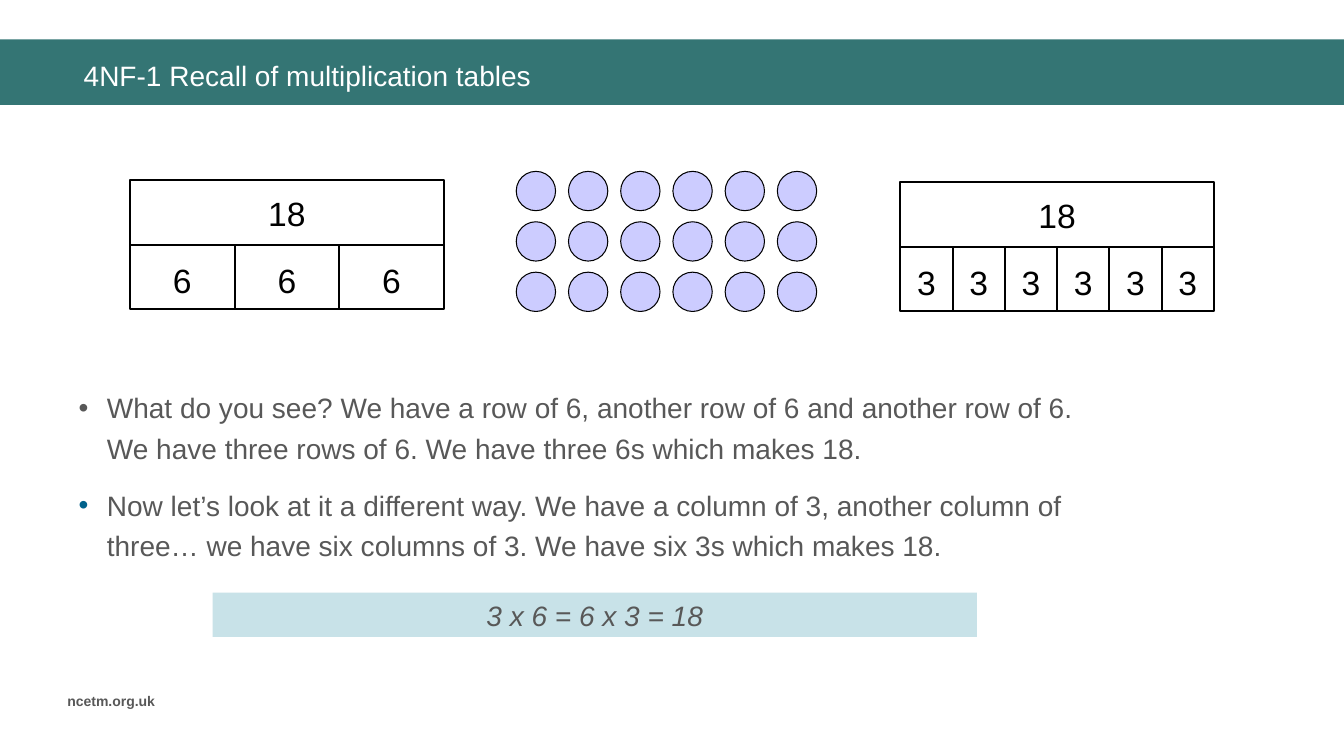
from lxml.etree import SubElement
from pptx import Presentation
from pptx.dml.color import RGBColor
from pptx.enum.shapes import MSO_SHAPE
from pptx.enum.text import MSO_ANCHOR, MSO_AUTO_SIZE, PP_ALIGN
from pptx.oxml.ns import qn
from pptx.util import Pt

PX = 9144
TEAL = RGBColor(0x34, 0x75, 0x74)
PALE_BLUE = RGBColor(0xC8, 0xE2, 0xE8)
LILAC = RGBColor(0xCC, 0xCC, 0xFF)
BLUE = RGBColor(0x00, 0x62, 0x8C)
GREY = RGBColor(0x58, 0x58, 0x58)
BLACK = RGBColor(0, 0, 0)
WHITE = RGBColor(0xFF, 0xFF, 0xFF)

POINTS = [
    ("What do you see? We have a row of 6, another row of 6 and another row of 6. "
     "We have three rows of 6. We have three 6s which makes 18.", GREY),
    ("Now let’s look at it a different way. We have a column of 3, another column of "
     "three… we have six columns of 3. We have six 3s which makes 18.", BLUE),
]


def emu(*lengths):
    """Turn px lengths into whole EMU."""
    return [round(length * PX) for length in lengths]


def place(shape, box):
    """Move a shape to a px box."""
    shape.left, shape.top, shape.width, shape.height = emu(*box)


def style(paragraph, size, color, alignment=PP_ALIGN.LEFT):
    """Set the font and alignment of a paragraph."""
    paragraph.alignment = alignment
    paragraph.font.name = "Arial"
    paragraph.font.size = Pt(size)
    paragraph.font.color.rgb = color


def add_block(shapes, preset, box, fill=None, line_width=0):
    """Add a preset shape, filled or outlined in black."""
    shape = shapes.add_shape(preset, *emu(*box))
    shape.shadow.inherit = False
    if fill is None:
        shape.fill.background()
    else:
        shape.fill.solid()
        shape.fill.fore_color.rgb = fill
    if line_width:
        shape.line.color.rgb = BLACK
        shape.line.width = Pt(line_width)
    else:
        shape.line.fill.background()
    return shape


def add_header(slide, box, text):
    """Add the title on its coloured band."""
    left, top, width, height = box
    band = add_block(slide.shapes, MSO_SHAPE.RECTANGLE, box, TEAL)
    title = slide.shapes.title
    title.element.addprevious(band.element)
    place(title, (left + 65, top + 12, width - 101, height - 18))
    frame = title.text_frame
    frame.text = text
    frame.auto_size = MSO_AUTO_SIZE.NONE
    frame.vertical_anchor = MSO_ANCHOR.MIDDLE
    frame.margin_left = 18 * PX
    style(frame.paragraphs[0], 20, WHITE)


def add_dot_array(slide, box, rows, columns, diameter):
    """Spread rows and columns of dots evenly over the box."""
    left, top, width, height = box
    column_step = (width - diameter) / (columns - 1)
    row_step = (height - diameter) / (rows - 1)
    for row in range(rows):
        for column in range(columns):
            dot = (left + column * column_step, top + row * row_step, diameter, diameter)
            add_block(slide.shapes, MSO_SHAPE.OVAL, dot, LILAC, 0.75)


def add_bar_model(slide, box, whole, part, count):
    """Add a whole bar above a row of equal parts."""
    left, top, width, height = box
    row_height = height / 2
    part_width = width / count
    cells = [(whole, (left, top, width, row_height), 0)]
    cells += [(part, (left + index * part_width, top + row_height, part_width, row_height), 5)
              for index in range(count)]
    group = slide.shapes.add_group_shape()
    for number, cell_box, margin_top in cells:
        cell = add_block(group.shapes, MSO_SHAPE.RECTANGLE, cell_box, line_width=1.5)
        frame = cell.text_frame
        frame.text = str(number)
        frame.vertical_anchor = MSO_ANCHOR.MIDDLE
        frame.margin_top, frame.margin_bottom = emu(margin_top, 0)
        style(frame.paragraphs[0], 24, BLACK, PP_ALIGN.CENTER)


def add_points(slide, box, points):
    """Fill the body placeholder with bulleted points."""
    body = slide.placeholders[1]
    place(body, box)
    frame = body.text_frame
    frame.auto_size = MSO_AUTO_SIZE.NONE
    frame.vertical_anchor = MSO_ANCHOR.TOP
    for index, (text, bullet_color) in enumerate(points):
        paragraph = frame.add_paragraph() if index else frame.paragraphs[0]
        paragraph.text = text
        properties = paragraph._p.get_or_add_pPr()
        properties.set("marL", str(28 * PX))
        properties.set("indent", str(-28 * PX))
        color = SubElement(properties, qn("a:buClr"))
        SubElement(color, qn("a:srgbClr"), val=str(bullet_color))
        SubElement(properties, qn("a:buChar"), char="•")
        paragraph.line_spacing = 1.2
        paragraph.space_before = Pt(6 if index else 0)
        paragraph.space_after = Pt(6)
        style(paragraph, 20, GREY)


def add_equation(slide, box, text):
    """Add the highlighted equation."""
    shape = add_block(slide.shapes, MSO_SHAPE.RECTANGLE, box, PALE_BLUE)
    frame = shape.text_frame
    frame.text = text
    frame.vertical_anchor = MSO_ANCHOR.MIDDLE
    paragraph = frame.paragraphs[0]
    style(paragraph, 20, GREY, PP_ALIGN.CENTER)
    paragraph.font.italic = True


def add_footer(slide, box, text):
    """Add the web address at the foot."""
    frame = slide.shapes.add_textbox(*emu(*box)).text_frame
    frame.word_wrap = True
    frame.text = text
    style(frame.paragraphs[0], 10, GREY)
    frame.paragraphs[0].font.bold = True


def main():
    """Build and save the slide."""
    presentation = Presentation()
    presentation.slide_width, presentation.slide_height = emu(1333, 750)
    slide = presentation.slides.add_slide(presentation.slide_layouts[1])
    add_header(slide, (0, 39, 1333, 65), "4NF-1 Recall of multiplication tables")
    add_bar_model(slide, (129, 179, 311, 128), 18, 6, 3)
    add_dot_array(slide, (512, 170, 298, 139), 3, 6, 39)
    add_bar_model(slide, (893, 181, 311, 128), 18, 3, 6)
    add_points(slide, (68, 376, 1050, 200), POINTS)
    add_equation(slide, (211, 588, 758, 44), "3 x 6 = 6 x 3 = 18")
    add_footer(slide, (57, 682, 121, 27), "ncetm.org.uk")
    presentation.save("out.pptx")


if __name__ == "__main__":
    main()
